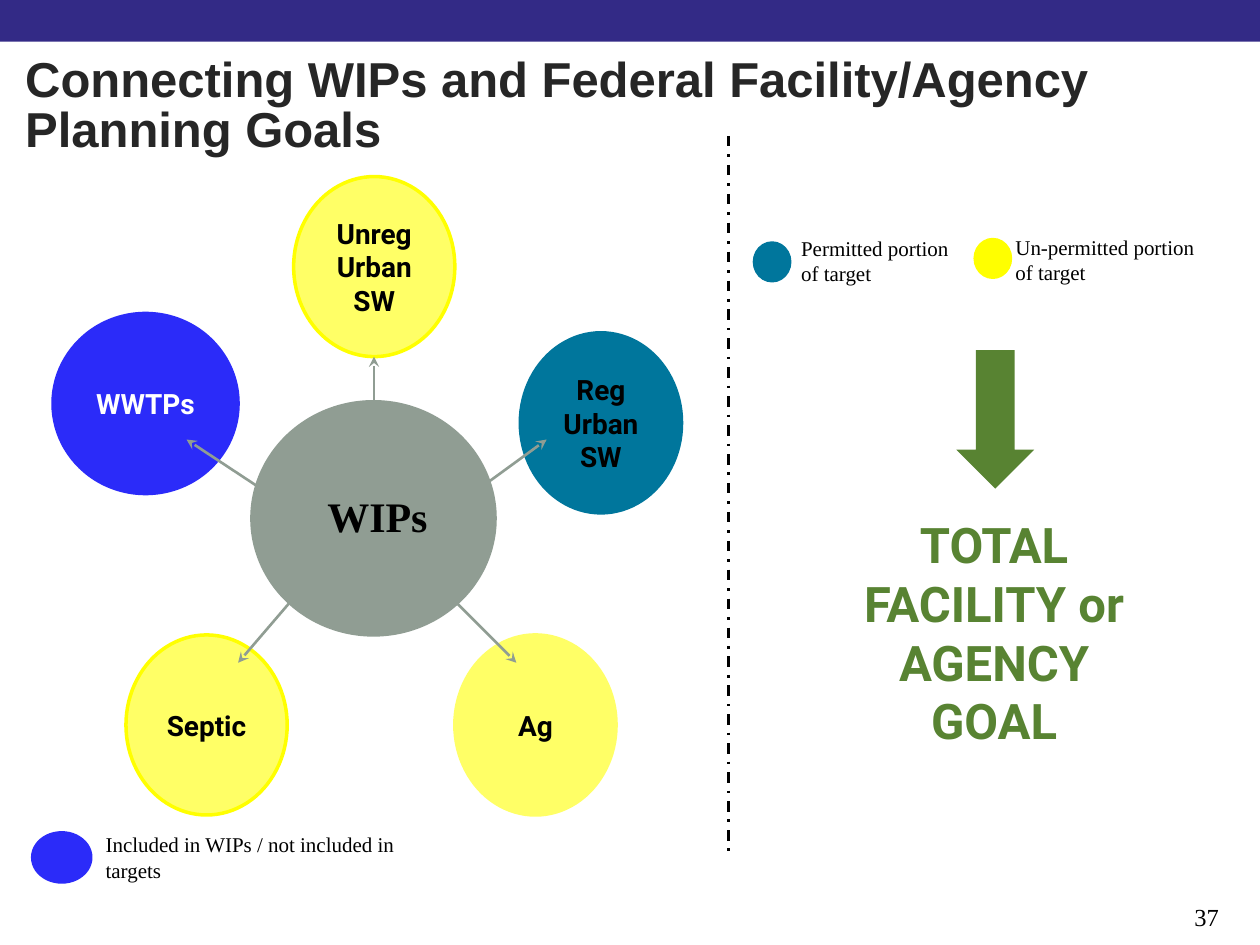
from dataclasses import dataclass

from lxml.etree import SubElement
from pptx import Presentation
from pptx.dml.color import RGBColor
from pptx.enum.dml import MSO_LINE
from pptx.enum.shapes import MSO_CONNECTOR, MSO_SHAPE
from pptx.enum.text import MSO_ANCHOR, PP_ALIGN
from pptx.oxml.ns import qn
from pptx.util import Cm, Pt


@dataclass(frozen=True)
class Theme:
    bar: str = "332A86"
    title: str = "262626"
    hub: str = "909D93"
    blue: str = "2B2BF9"
    teal: str = "00769C"
    yellow: str = "FFFF00"
    pale: str = "FFFF66"
    green: str = "588332"
    black: str = "000000"
    white: str = "FFFFFF"
    head: str = "Arial"
    label: str = "Roboto"
    body: str = "Times New Roman"
    large: int = 28
    hub_size: int = 24
    medium: int = 16
    number: int = 14
    small: int = 12


T = Theme()
prs = Presentation()
prs.slide_width, prs.slide_height = Cm(25.4), Cm(19.05)
s = prs.slides.add_slide(prs.slide_layouts[6])


def add_text(text, box, shape=None, fill=None, line=None, size=T.small, font=T.body,
             color=T.black, bold=False, align=PP_ALIGN.LEFT, anchor=MSO_ANCHOR.TOP,
             margins=(0.25, 0.13, 0.25, 0.13), spacing=None):
    """Add a text box, or a preset shape with text; each line is a paragraph."""
    box = [Cm(v) for v in box]
    if shape is None:
        sp = s.shapes.add_textbox(*box)
    else:
        sp = s.shapes.add_shape(shape, *box)
        sp.shadow.inherit = False
        sp.fill.solid()
        sp.fill.fore_color.rgb = RGBColor.from_string(fill)
        if line:
            sp.line.color.rgb = RGBColor.from_string(line)
            sp.line.width = Pt(2)
        else:
            sp.line.fill.background()
    tf = sp.text_frame
    tf.word_wrap = True
    tf.vertical_anchor = anchor
    tf.margin_left, tf.margin_top, tf.margin_right, tf.margin_bottom = map(Cm, margins)
    for i, words in enumerate(text.splitlines()):
        p = tf.add_paragraph() if i else tf.paragraphs[0]
        p.alignment = align
        if spacing:
            p.line_spacing = spacing
        r = p.add_run()
        r.text = words
        r.font.size, r.font.name, r.font.bold = Pt(size), font, bold
        r.font.color.rgb = RGBColor.from_string(color)


def add_line(x1, y1, x2, y2, color, dash=None, arrow=False):
    cx = s.shapes.add_connector(MSO_CONNECTOR.STRAIGHT, Cm(x1), Cm(y1), Cm(x2), Cm(y2))
    cx.line.color.rgb = RGBColor.from_string(color)
    cx.line.width = Pt(1.5)
    if dash:
        cx.line.dash_style = dash
    if arrow:
        SubElement(cx.line._get_or_add_ln(), qn("a:tailEnd"), type="stealth")
    SubElement(cx._element.spPr, qn("a:effectLst"))


# Top bar, page number and title
add_text("", (0, 0, 25.4, 0.84), shape=MSO_SHAPE.RECTANGLE, fill=T.bar)
add_text("37", (23.5, 18.16, 1.07, 0.64), size=T.number, align=PP_ALIGN.RIGHT,
         anchor=MSO_ANCHOR.MIDDLE, margins=(0, 0.08, 0, 0.08))
add_text("Connecting WIPs and Federal Facility/Agency Planning Goals",
         (0, 0.89, 25.4, 2.54), size=T.large, font=T.head, color=T.title, bold=True,
         anchor=MSO_ANCHOR.MIDDLE, margins=(0.51, 0.08, 0.15, 0.08), spacing=0.85)

# Hub
add_text("", (5.08, 8.1, 4.9, 4.7), shape=MSO_SHAPE.OVAL, fill=T.hub, line=T.hub)
add_text("WIPs", (5.87, 9.75, 3.48, 1.17), size=T.hub_size, bold=True,
         align=PP_ALIGN.CENTER)

# Sources around the hub
sources = [
    ("WWTPs", 1.07, 6.32, 3.73, T.blue, T.blue, T.white),
    ("Septic", 2.54, 12.8, 3.25, T.pale, T.yellow, T.black),
    ("Unreg Urban SW", 5.92, 3.56, 3.25, T.pale, T.yellow, T.black),
    ("Reg Urban SW", 10.49, 6.71, 3.25, T.teal, T.teal, T.black),
    ("Ag", 9.17, 12.8, 3.25, T.pale, T.pale, T.black),
]
for name, x, y, w, fill, line, color in sources:
    add_text(name, (x, y, w, 3.63), shape=MSO_SHAPE.OVAL, fill=fill, line=line,
             size=T.medium, font=T.label, color=color, bold=True,
             align=PP_ALIGN.CENTER, anchor=MSO_ANCHOR.MIDDLE)

# Arrows from the hub to each source
for ends in [(9.8, 9.75, 11.02, 8.86), (5.23, 9.83, 3.76, 8.86),
             (5.82, 12.17, 4.8, 13.36), (9.22, 12.17, 10.41, 13.36),
             (7.54, 8.1, 7.54, 7.19)]:
    add_line(*ends, T.hub, arrow=True)

# Legend: marker and its caption
legend = [
    (T.teal, (15.21, 4.9, 0.71, 0.76),
     """Permitted portion
of target""", (15.9, 4.62, 4.85, 1.27)),
    (T.yellow, (19.66, 4.83, 0.71, 0.76),
     """Un-permitted portion
of target""", (20.22, 4.6, 4.93, 1.3)),
    (T.blue, (0.66, 16.79, 1.17, 0.99),
     "Included in WIPs / not included in targets", (1.88, 16.64, 6.83, 1.3)),
]
for color, marker, caption, box in legend:
    add_text("", marker, shape=MSO_SHAPE.OVAL, fill=color, line=color)
    add_text(caption, box)

# Divider and overall goal
add_line(14.68, 2.74, 14.68, 17.25, T.black, dash=MSO_LINE.DASH_DOT)
add_text("", (19.28, 7.06, 1.57, 2.79), shape=MSO_SHAPE.DOWN_ARROW, fill=T.green)
add_text("TOTAL FACILITY or AGENCY GOAL", (16.99, 10.24, 6.1, 5.44), size=T.large,
         font=T.label, color=T.green, bold=True, align=PP_ALIGN.CENTER)

prs.save("out.pptx")
